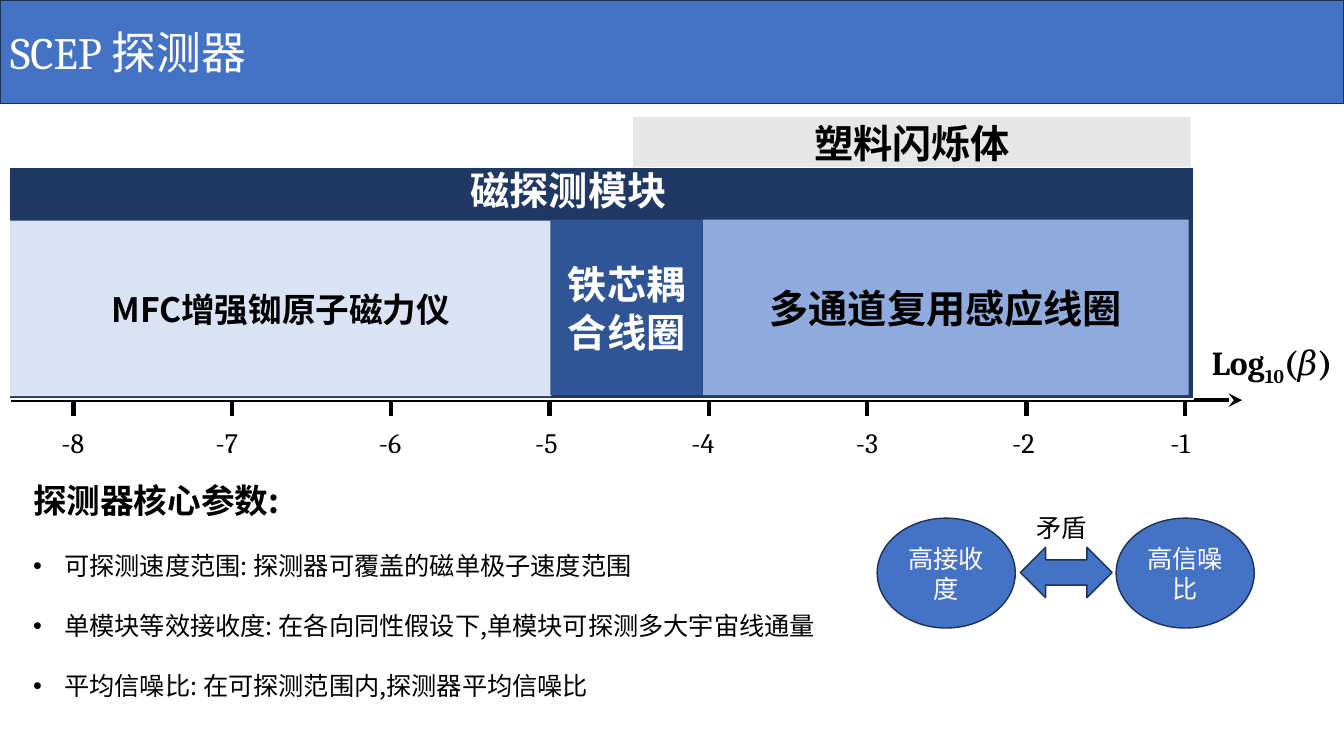
from lxml import etree
from pptx import Presentation
from pptx.dml.color import RGBColor
from pptx.enum.shapes import MSO_CONNECTOR, MSO_SHAPE
from pptx.enum.text import MSO_ANCHOR, PP_ALIGN
from pptx.oxml.ns import qn
from pptx.util import Pt

PX = 9144  # 100 px to the inch
RECT, OVAL, DOUBLE_ARROW = MSO_SHAPE.RECTANGLE, MSO_SHAPE.OVAL, MSO_SHAPE.LEFT_RIGHT_ARROW
STRAIGHT = MSO_CONNECTOR.STRAIGHT
LEFT, CENTER = PP_ALIGN.LEFT, PP_ALIGN.CENTER
TOP, MIDDLE = MSO_ANCHOR.TOP, MSO_ANCHOR.MIDDLE
SERIF, SANS = "Cambria", "Noto Sans CJK SC"
COLORS = {name: RGBColor.from_string(value) for name, value in {
    "black": "000000", "white": "FFFFFF", "gray": "E7E6E6", "blue": "4472C4",
    "outline": "1E3256", "navy": "203864", "pale": "DAE3F3", "sky": "8FAADC",
    "deep": "2F5597"}.items()}


def add_run(paragraph, text, typeface, size, color, bold=False):
    """Add a run whose Latin and East Asian typefaces agree."""
    run = paragraph.add_run()
    run.text = text
    formats = {"name": typeface, "size": Pt(size), "bold": bold}
    for attribute, value in formats.items():
        setattr(run.font, attribute, value)
    run.font.color.rgb = COLORS[color]
    east_asian = etree.SubElement(run.font._element, qn("a:ea"))
    east_asian.set("typeface", typeface)
    return run


def add_box(bounds, preset=None, fill=None, line=None, text="", size=18,
            color="black", bold=False, typeface=SANS):
    """Add a filled shape with centred text, or a non-wrapping label without a preset."""
    place = [value * PX for value in bounds]
    if preset is None:
        box = slide.shapes.add_textbox(*place)
    else:
        box = slide.shapes.add_shape(preset, *place)
        box.shadow.inherit = False
        box.fill.solid()
        box.fill.fore_color.rgb = COLORS[fill]
        if line:
            box.line.color.rgb = COLORS[line]
            box.line.width = Pt(1)
        else:
            box.line.fill.background()
    frame = box.text_frame
    frame.word_wrap = preset is not None
    frame.vertical_anchor = MIDDLE if preset is not None else TOP
    if text:
        paragraph = frame.paragraphs[0]
        paragraph.alignment = CENTER if preset is not None else LEFT
        if typeface == SANS:
            paragraph.line_spacing = Pt(round(size * 1.22))
        add_run(paragraph, text, typeface, size, color, bold)
    return box


deck = Presentation()
deck.slide_width, deck.slide_height = 1333 * PX, 750 * PX
slide = deck.slides.add_slide(deck.slide_layouts[5])

# Title bar
title = slide.shapes.title
bar = {"left": 0, "top": 0, "width": 1333 * PX, "height": 103 * PX}
for attribute, value in bar.items():
    setattr(title, attribute, value)
title.fill.solid()
title.fill.fore_color.rgb = COLORS["blue"]
title.line.color.rgb = COLORS["outline"]
title.line.width = Pt(1)
title.text_frame.vertical_anchor = MIDDLE
heading = title.text_frame.paragraphs[0]
heading.alignment = LEFT
add_run(heading, "SCEP ", SERIF, 32, "white")
add_run(heading, "探测器", SANS, 32, "white")

# Speed axis with its ticks
add_box((628, 116, 553, 51), RECT, "gray", text="塑料闪烁体", size=28, bold=True)
AXIS_Y, TICK_LENGTH, FIRST_TICK, LAST_TICK = 397, 16, 73, 1175
label_centers = [73, 226, 388, 543, 698, 861, 1016, 1173]
intervals = len(label_centers) - 1
ticks = [FIRST_TICK + round((LAST_TICK - FIRST_TICK) * i / intervals)
         for i in range(intervals + 1)]
segments = [(11, AXIS_Y, 1232, AXIS_Y, 3.25)]
segments += [(x, AXIS_Y, x, AXIS_Y + TICK_LENGTH, 3) for x in ticks]
for *ends, weight in segments:
    stroke = slide.shapes.add_connector(STRAIGHT, *[value * PX for value in ends])
    stroke.line.color.rgb = COLORS["black"]
    stroke.line.width = Pt(weight)
    properties = stroke._element.spPr
    etree.SubElement(properties, qn("a:effectLst"))
    if ends[1] == ends[3]:
        etree.SubElement(properties.find(qn("a:ln")), qn("a:tailEnd"), type="stealth")
for exponent, center in enumerate(label_centers, start=-8):
    add_box((center - 22, 417, 44, 44), text=str(exponent), size=20, typeface=SERIF)

axis_name = add_box((1192, 334, 142, 50)).text_frame.paragraphs[0]
for part, baseline in (("Log", 0), ("10", -25000), ("(𝛽)", 0)):
    run = add_run(axis_name, part, SERIF, 24, "black", True)
    run.font._element.set("baseline", str(baseline))

# Magnetic detection module
add_box((9, 166, 1175, 230), RECT, "navy", "white")
add_box((457, 160, 217, 57), text="磁探测模块", size=28, color="white", bold=True)
for left, top, width, fill, color, size, name in (
        (10, 219, 537, "pale", "black", 24, "MFC增强铷原子磁力仪"),
        (697, 218, 482, "sky", "black", 28, "多通道复用感应线圈"),
        (546, 218, 151, "deep", "white", 28, "铁芯耦合线圈")):
    add_box((left, top, width, 174), RECT, fill, text=name, size=size,
            color=color, bold=True)

# Core parameters
parameters = add_box((23, 471, 847, 263), text="探测器核心参数:", size=24, bold=True).text_frame
parameters.word_wrap = True
for entry in ("可探测速度范围: 探测器可覆盖的磁单极子速度范围",
              "单模块等效接收度: 在各向同性假设下,单模块可探测多大宇宙线通量",
              "平均信噪比: 在可探测范围内,探测器平均信噪比"):
    item = parameters.add_paragraph()
    item.line_spacing, item.space_before = Pt(22), Pt(21)
    settings = item._p.get_or_add_pPr()
    settings.set("marL", str(31 * PX))
    settings.set("indent", str(-31 * PX))
    etree.SubElement(settings, qn("a:buFont"), typeface="Arial")
    etree.SubElement(settings, qn("a:buChar"), char="•")
    add_run(item, entry, SANS, 18, "black")

# Trade-off
for left, goal in ((870, "高接收度"), (1107, "高信噪比")):
    add_box((left, 514, 137, 109), OVAL, "blue", "outline", goal, color="white")
add_box((1012, 543, 91, 50), DOUBLE_ARROW, "blue", "outline")
add_box((1018, 503, 71, 40), text="矛盾")

deck.save("out.pptx")
